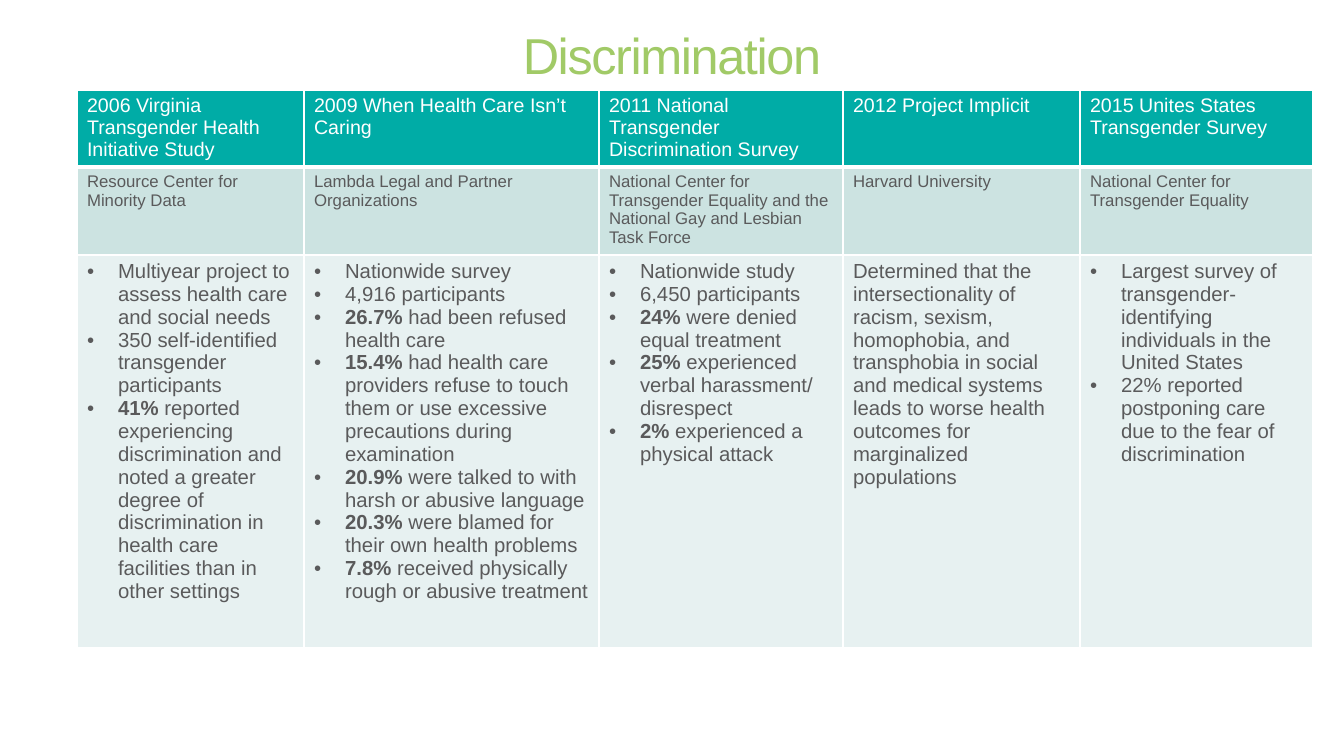
from lxml.etree import SubElement
from pptx import Presentation
from pptx.dml.color import RGBColor
from pptx.enum.text import MSO_ANCHOR, MSO_AUTO_SIZE, PP_ALIGN
from pptx.oxml.ns import qn
from pptx.util import Emu, Pt

EMU_PER_PX = 914400 / 100.8
GREEN = RGBColor(0xA1, 0xCA, 0x67)
TEAL = RGBColor(0x00, 0xAC, 0xA6)
MIST = RGBColor(0xCC, 0xE3, 0xE1)
PALE = RGBColor(0xE7, 0xF1, 0xF1)
GREY = RGBColor(0x5A, 0x5A, 0x5B)
WHITE = RGBColor(0xFF, 0xFF, 0xFF)

COLUMN_WIDTHS = [227, 295, 244, 237, 233]
ROW_HEIGHTS = [77, 88, 393]
ROW_FORMATS = [
    dict(fill=TEAL, color=WHITE, size=14, bottom=3),
    dict(fill=MIST, color=GREY, size=12),
    dict(fill=PALE, color=GREY, size=14.5),
]
STUDIES = [
    (
        "2006 Virginia Transgender Health Initiative Study",
        "Resource Center for Minority Data",
        [
            "Multiyear project to assess health care and social needs",
            "350 self-identified transgender participants",
            "**41% **reported experiencing discrimination and noted a greater "
            "degree of discrimination in health care facilities than in other settings",
        ],
    ),
    (
        "2009 When Health Care Isn’t Caring",
        "Lambda Legal and Partner Organizations",
        [
            "Nationwide survey",
            "4,916 participants",
            "**26.7% **had been refused health care",
            "**15.4% **had health care providers refuse to touch them or use "
            "excessive precautions during examination",
            "**20.9% **were talked to with harsh or abusive language",
            "**20.3% **were blamed for their own health problems",
            "**7.8% **received physically rough or abusive treatment",
        ],
    ),
    (
        "2011 National Transgender Discrimination Survey",
        "National Center for Transgender Equality and the National Gay and "
        "Lesbian Task Force",
        [
            "Nationwide study",
            "6,450 participants",
            "**24% **were denied equal treatment",
            "**25%** experienced verbal harassment/\ndisrespect",
            "**2% **experienced a physical attack",
        ],
    ),
    (
        "2012 Project Implicit",
        "Harvard University",
        "Determined that the intersectionality of racism, sexism, homophobia, "
        "and transphobia in social and medical systems leads to worse health "
        "outcomes for marginalized populations",
    ),
    (
        "2015 Unites States Transgender Survey",
        "National Center for Transgender Equality",
        [
            "Largest survey of transgender-identifying individuals in the United States",
            "22% reported postponing care due to the fear of discrimination",
        ],
    ),
]


def px(length):
    """Turn pixels into EMU."""
    return Emu(round(length * EMU_PER_PX))


def add_bullet(paragraph, indent=31):
    """Give a paragraph a hanging round bullet."""
    properties = paragraph._p.get_or_add_pPr()
    properties.set("marL", str(px(indent)))
    properties.set("indent", str(-px(indent)))
    SubElement(properties, qn("a:buFont")).set("typeface", "Arial")
    SubElement(properties, qn("a:buChar")).set("char", "•")


def write(paragraph, text, *, size, color, align=PP_ALIGN.LEFT, spacing=None):
    """Write text whose **marked** parts are bold and whose newlines are breaks."""
    paragraph.alignment = align
    for part_number, part in enumerate(text.split("**")):
        for line_number, line in enumerate(part.split("\n")):
            if line_number:
                paragraph.add_line_break()
            if not line:
                continue
            run = paragraph.add_run()
            run.text = line
            run.font.name = "Arial"
            run.font.size = Pt(size)
            run.font.bold = part_number % 2 == 1
            run.font.color.rgb = color
            if spacing is not None:
                run.font._element.set("spc", str(spacing))


def set_borders(cell, bottom):
    """Draw white cell borders, one point wide except at the bottom."""
    properties = cell._tc.get_or_add_tcPr()
    for side, width in zip(("lnL", "lnR", "lnT", "lnB"), (1, 1, 1, bottom)):
        line = SubElement(properties, qn(f"a:{side}"), w=str(Pt(width)))
        solid = SubElement(line, qn("a:solidFill"))
        SubElement(solid, qn("a:srgbClr")).set("val", str(WHITE))


def fill_cell(cell, content, *, fill, color, size, bottom=1):
    """Write a sentence or a bulleted list into a filled cell."""
    set_borders(cell, bottom)
    cell.fill.solid()
    cell.fill.fore_color.rgb = fill
    bulleted = isinstance(content, list)
    for number, text in enumerate(content if bulleted else [content]):
        frame = cell.text_frame
        paragraph = frame.add_paragraph() if number else frame.paragraphs[0]
        if bulleted:
            add_bullet(paragraph)
        write(paragraph, text, size=size, color=color)


def add_title(slide, text):
    """Place the slide title."""
    title = slide.shapes.title
    title.left, title.top, title.width, title.height = map(px, (67, 0, 1210, 109))
    title.text_frame.auto_size = MSO_AUTO_SIZE.NONE
    title.text_frame.vertical_anchor = MSO_ANCHOR.MIDDLE
    write(title.text_frame.paragraphs[0], text, size=36, color=GREEN,
          align=PP_ALIGN.CENTER, spacing=-100)


def add_study_table(slide):
    """Add the table with one column for each study."""
    table = slide.shapes.add_table(
        len(ROW_HEIGHTS), len(STUDIES), px(77), px(90),
        px(sum(COLUMN_WIDTHS)), px(sum(ROW_HEIGHTS)),
    ).table
    table.horz_banding = False
    for row, height in zip(table.rows, ROW_HEIGHTS):
        row.height = px(height)
    for column_number, (width, study) in enumerate(zip(COLUMN_WIDTHS, STUDIES)):
        table.columns[column_number].width = px(width)
        for row_number, content in enumerate(study):
            fill_cell(table.cell(row_number, column_number), content,
                      **ROW_FORMATS[row_number])


def main():
    """Build and save the slide."""
    presentation = Presentation()
    presentation.slide_width, presentation.slide_height = px(1344), px(756)
    slide = presentation.slides.add_slide(presentation.slide_layouts[5])
    add_title(slide, "Discrimination")
    add_study_table(slide)
    presentation.save("out.pptx")


if __name__ == "__main__":
    main()
